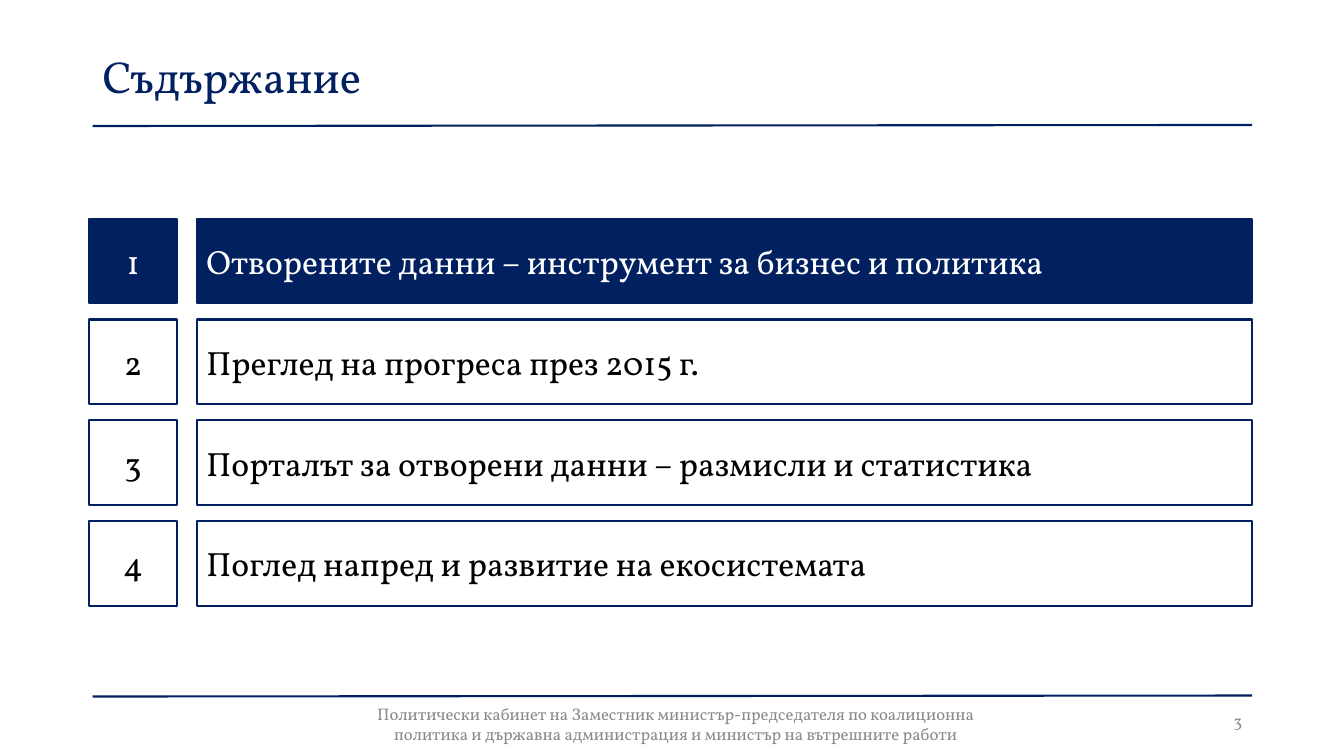
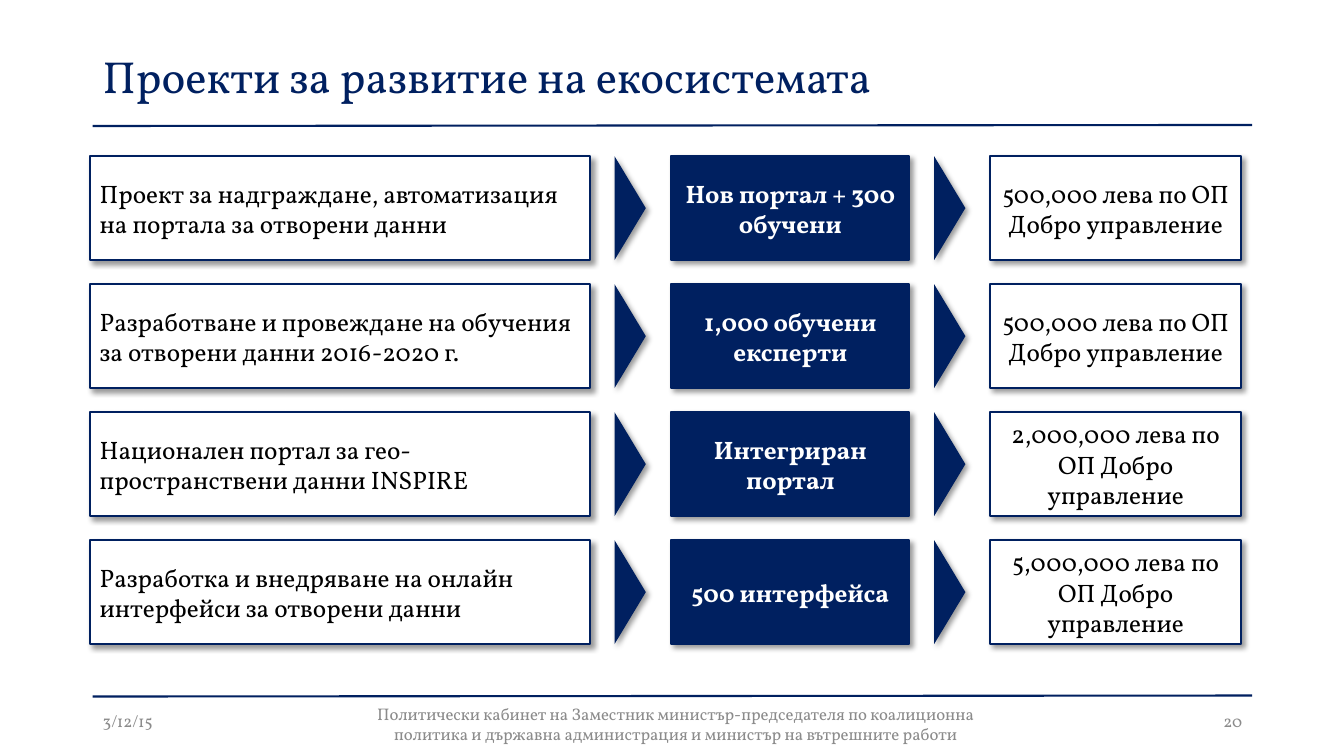
import lxml.etree
import pptx
import pptx.dml.color
import pptx.enum.shapes
import pptx.enum.text
import pptx.oxml.ns
import pptx.util

Inches = pptx.util.Inches
Pt = pptx.util.Pt
RGBColor = pptx.dml.color.RGBColor
Align = pptx.enum.text.PP_ALIGN
Shape = pptx.enum.shapes.MSO_SHAPE
qn = pptx.oxml.ns.qn

NAVY = RGBColor(0x00, 0x20, 0x60)
WHITE = RGBColor(0xFF, 0xFF, 0xFF)
BLACK = RGBColor(0x00, 0x00, 0x00)
GRAY = RGBColor(0x8B, 0x8B, 0x8B)

FONT = "Vollkorn"
LINE_WIDTH = 1.5
LEFT, RIGHT = 0.92, 12.42
RULES = ((1.25, 1.24), (6.91, 6.9))
FOOTER = (
    "Политически кабинет на Заместник министър-председателя по коалиционна "
    "политика и държавна администрация и министър на вътрешните работи"
)

FRAME_FORMAT = {
    "word_wrap": True,
    "vertical_anchor": pptx.enum.text.MSO_ANCHOR.MIDDLE,
    "margin_left": Inches(0.1),
    "margin_right": Inches(0.1),
    "margin_top": Inches(0.05),
    "margin_bottom": Inches(0.05),
}

AGENDA = (
    "Отворените данни – инструмент за бизнес и политика",
    "Преглед на прогреса през 2015 г.",
    "Порталът за отворени данни – размисли и статистика",
    "Поглед напред и развитие на екосистемата",
)
AGENDA_TOP, AGENDA_STEP, AGENDA_HEIGHT = 2.17, 1.0, 0.84

PROJECTS = (
    ("Проект за надграждане, автоматизация на портала за отворени данни",
     "Нов портал + 300 обучени",
     "500,000 лева по ОП Добро управление"),
    ("Разработване и провеждане на обучения за отворени данни 2016-2020 г.",
     "1,000 обучени експерти",
     "500,000 лева по ОП Добро управление"),
    ("Национален портал за гео-пространствени данни INSPIRE",
     "Интегриран портал",
     "2,000,000 лева по ОП Добро управление"),
    ("Разработка и внедряване на онлайн интерфейси за отворени данни",
     "500 интерфейса",
     "5,000,000 лева по ОП Добро управление"),
)
PROJECT_TOP, PROJECT_STEP, PROJECT_HEIGHT = 1.55, 1.27, 1.03
PROJECT_COLUMNS = (
    {"left": 0.89, "width": 4.96, "align": Align.LEFT},
    {"left": 6.66, "width": 2.36, "align": Align.CENTER,
     "dark": True, "bold": True},
    {"left": 9.82, "width": 2.49, "align": Align.CENTER},
)
ARROW_CENTERS = (6.25, 9.42)
ARROW_DEPTH = 0.31


def set_values(target, values):
    for name, value in values.items():
        setattr(target, name, value)


def write_text(box, text, size, color, align=Align.LEFT, bold=False):
    set_values(box.text_frame, FRAME_FORMAT)
    para = box.text_frame.paragraphs[0]
    para.alignment = align
    span = para.add_run()
    span.text = text
    set_values(span.font, {"name": FONT, "size": Pt(size), "bold": bold})
    span.font.color.rgb = color


def add_label(page, area, text, size, color, align=Align.LEFT):
    box = page.shapes.add_textbox(*map(Inches, area))
    write_text(box, text, size, color, align)


def add_rule(page, start, end):
    rule = page.shapes.add_connector(
        pptx.enum.shapes.MSO_CONNECTOR.STRAIGHT,
        Inches(LEFT), Inches(start), Inches(RIGHT), Inches(end))
    rule.line.color.rgb = NAVY
    rule.line.width = Pt(LINE_WIDTH)
    lxml.etree.SubElement(rule._element.spPr, qn("a:effectLst"))


def add_shadow(shape):
    effects = shape._element.spPr.find(qn("a:effectLst"))
    shadow = lxml.etree.SubElement(
        effects, qn("a:outerShdw"), blurRad=str(Pt(4)), dist=str(Pt(3)),
        dir="2700000", algn="tl", rotWithShape="0")
    color = lxml.etree.SubElement(shadow, qn("a:srgbClr"), val=str(BLACK))
    lxml.etree.SubElement(color, qn("a:alpha"), val="40000")


def add_filled(page, kind, area, fill):
    shape = page.shapes.add_shape(kind, *map(Inches, area))
    shape.shadow.inherit = False
    shape.fill.solid()
    shape.fill.fore_color.rgb = fill
    return shape


def add_card(page, area, text, size, align, dark=False, bold=False):
    card = add_filled(page, Shape.RECTANGLE, area, NAVY if dark else WHITE)
    card.line.color.rgb = NAVY
    card.line.width = Pt(LINE_WIDTH)
    write_text(card, text, size, WHITE if dark else BLACK, align, bold)
    return card


def add_arrow(page, center, top):
    area = (center - PROJECT_HEIGHT / 2,
            top + (PROJECT_HEIGHT - ARROW_DEPTH) / 2,
            PROJECT_HEIGHT, ARROW_DEPTH)
    arrow = add_filled(page, Shape.ISOSCELES_TRIANGLE, area, NAVY)
    arrow.line.fill.background()
    arrow.rotation = 90
    add_shadow(arrow)


def add_page(deck, title, number, date=None):
    page = deck.slides.add_slide(deck.slide_layouts[6])
    for start, end in RULES:
        add_rule(page, start, end)
    add_label(page, (LEFT, 0.4, RIGHT - LEFT, 0.69), title, 32, NAVY)
    if date:
        add_label(page, (LEFT, 6.95, 3, 0.4), date, 12, GRAY)
    add_label(page, (3.4, 6.98, 6.61, 0.4), FOOTER, 12, GRAY, Align.CENTER)
    add_label(page, (RIGHT - 3, 6.95, 3, 0.4), number, 12, GRAY, Align.RIGHT)
    return page


def add_agenda(page, current):
    for index, topic in enumerate(AGENDA):
        top = AGENDA_TOP + index * AGENDA_STEP
        number = index + 1
        dark = number == current
        add_card(page, (0.88, top, 0.88, AGENDA_HEIGHT), str(number), 24,
                 Align.CENTER, dark)
        add_card(page, (1.95, top, 10.47, AGENDA_HEIGHT), topic, 24,
                 Align.LEFT, dark)


def add_projects(page):
    for index, texts in enumerate(PROJECTS):
        top = PROJECT_TOP + index * PROJECT_STEP
        for column, text in zip(PROJECT_COLUMNS, texts):
            area = (column["left"], top, column["width"], PROJECT_HEIGHT)
            card = add_card(page, area, text, 18, column["align"],
                            column.get("dark", False),
                            column.get("bold", False))
            add_shadow(card)
        for center in ARROW_CENTERS:
            add_arrow(page, center, top)


def main():
    deck = pptx.Presentation()
    set_values(deck, {"slide_width": Inches(13.33),
                      "slide_height": Inches(7.5)})
    add_agenda(add_page(deck, "Съдържание", "3"), current=1)
    add_projects(add_page(deck, "Проекти за развитие на екосистемата", "20",
                          date="3/12/15"))
    deck.save("out.pptx")


if __name__ == "__main__":
    main()
